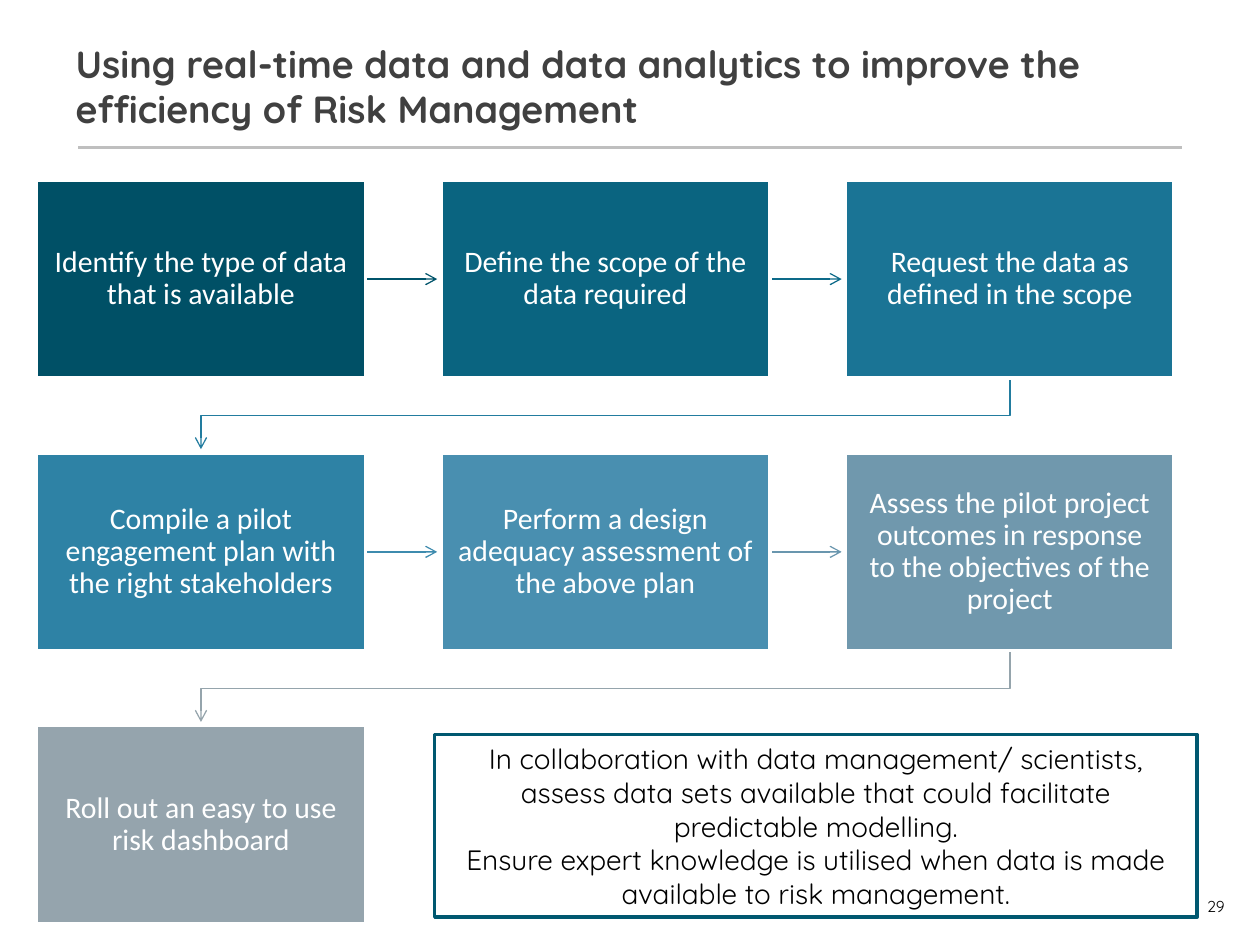
from lxml import etree
from pptx import Presentation
from pptx.dml.color import RGBColor
from pptx.enum.shapes import MSO_CONNECTOR, MSO_SHAPE
from pptx.enum.text import MSO_ANCHOR, MSO_AUTO_SIZE, PP_ALIGN
from pptx.oxml.ns import qn
from pptx.util import Inches, Pt

STRAIGHT = MSO_CONNECTOR.STRAIGHT
RECTANGLE = MSO_SHAPE.RECTANGLE
MIDDLE = MSO_ANCHOR.MIDDLE
NO_AUTOFIT = MSO_AUTO_SIZE.NONE
LEFT, CENTER, RIGHT = PP_ALIGN.LEFT, PP_ALIGN.CENTER, PP_ALIGN.RIGHT

TITLE = "Using real-time data and data analytics to improve the efficiency of Risk Management"
STEPS = [
    ("Identify the type of data that is available", "005066", "00546B"),
    ("Define the scope of the data required", "0A6480", "0D6A89"),
    ("Request the data as defined in the scope", "1A7495", "227C9F"),
    ("Compile a pilot engagement plan with the right stakeholders", "2E82A5", "3E8BAE"),
    ("Perform a design adequacy assessment of the above plan", "498FB0", "6996AE"),
    ("Assess the pilot project outcomes in response to the objectives of the project",
     "7098AD", "95A4AC"),
    ("Roll out an easy to use risk dashboard", "95A4AD", None),
]
COLLABORATION = [
    "In collaboration with data management/ scientists, assess data sets available "
    "that could facilitate predictable modelling.",
    "Ensure expert knowledge is utilised when data is made available to risk management.",
]
COLUMNS = 3
GRID_LEFT, GRID_TOP = 0.29, 1.43
STEP_WIDTH, STEP_HEIGHT = 2.61, 1.57
COLUMN_PITCH, ROW_PITCH = 3.21, 2.165
ARROW_GAP = 0.03


def rgb(value):
    return RGBColor.from_string(value)


def set_line(shape, color, width):
    shape.line.color.rgb = rgb(color)
    shape.line.width = Pt(width)


def add_arrowhead(shape):
    line = shape.element.spPr.find(qn("a:ln"))
    etree.SubElement(line, qn("a:tailEnd"), type="arrow")


def write(shape, texts, font, size, color, align, bold=False, spacing=None):
    frame = shape.text_frame
    frame.word_wrap = True
    frame.vertical_anchor = MIDDLE
    frame.text = "\n".join(texts)
    for paragraph in frame.paragraphs:
        paragraph.alignment = align
        paragraph.line_spacing = spacing
        paragraph.font.name = font
        paragraph.font.size = Pt(size)
        paragraph.font.bold = bold
        paragraph.font.color.rgb = rgb(color)
    return frame


def set_insets(frame, horizontal, vertical):
    frame.margin_left = frame.margin_right = Inches(horizontal)
    frame.margin_top = frame.margin_bottom = Inches(vertical)


def add_title(slide):
    title = slide.shapes.title
    title.left, title.top = Inches(0.5), Inches(0.3)
    title.width, title.height = Inches(9), Inches(0.76)
    frame = write(title, [TITLE], "Quicksand", 21.6, "404040", LEFT, bold=True)
    frame.auto_size = NO_AUTOFIT


def add_straight(slide, x1, y1, x2, y2, color, width):
    line = slide.shapes.add_connector(
        STRAIGHT, Inches(x1), Inches(y1), Inches(x2), Inches(y2))
    set_line(line, color, width)
    etree.SubElement(line.element.spPr, qn("a:effectLst"))
    return line


def add_row_arrow(slide, left, top, color):
    middle = top + STEP_HEIGHT / 2
    arrow = add_straight(slide, left + STEP_WIDTH, middle,
                         left + COLUMN_PITCH - ARROW_GAP, middle, color, 0.75)
    add_arrowhead(arrow)


def add_return_arrow(slide, left, top, color):
    start_x = left + STEP_WIDTH / 2
    end_x = GRID_LEFT + STEP_WIDTH / 2
    bottom = top + STEP_HEIGHT
    turn = (bottom + top + ROW_PITCH) / 2
    outline = slide.shapes.build_freeform(Inches(start_x), Inches(bottom))
    corners = [(start_x, turn), (end_x, turn), (end_x, top + ROW_PITCH - ARROW_GAP)]
    outline.add_line_segments([(Inches(x), Inches(y)) for x, y in corners], close=False)
    arrow = outline.convert_to_shape()
    arrow.shadow.inherit = False
    arrow.fill.background()
    set_line(arrow, color, 0.75)
    add_arrowhead(arrow)


def add_box(slide, left, top, width, height, fill, border):
    box = slide.shapes.add_shape(
        RECTANGLE, Inches(left), Inches(top), Inches(width), Inches(height))
    box.shadow.inherit = False
    box.fill.solid()
    box.fill.fore_color.rgb = rgb(fill)
    set_line(box, border, 2)
    return box


def add_step(slide, index, text, fill, arrow_color):
    row, column = divmod(index, COLUMNS)
    left = GRID_LEFT + column * COLUMN_PITCH
    top = GRID_TOP + row * ROW_PITCH
    if arrow_color:
        add_arrow = add_return_arrow if column == COLUMNS - 1 else add_row_arrow
        add_arrow(slide, left, top, arrow_color)
    step = add_box(slide, left, top, STEP_WIDTH, STEP_HEIGHT, fill, "FFFFFF")
    frame = write(step, [text], "Calibri", 17, "FFFFFF", CENTER, spacing=0.9)
    set_insets(frame, 0.13, 0.13)


def add_page_number(slide):
    number = slide.shapes.add_textbox(
        Inches(9.16), Inches(7.07), Inches(0.56), Inches(0.25))
    frame = write(number, ["29"], "Quicksand", 9, "000000", RIGHT)
    set_insets(frame, 0, 0)


def main():
    deck = Presentation()
    deck.slide_width, deck.slide_height = Inches(10), Inches(7.5)
    slide = deck.slides.add_slide(deck.slide_layouts[5])
    add_straight(slide, 0.62, 1.17, 9.38, 1.17, "BFBFBF", 2)
    add_title(slide)
    for index, step in enumerate(STEPS):
        add_step(slide, index, *step)
    add_page_number(slide)
    collaboration = add_box(slide, 3.45, 5.83, 6.05, 1.45, "FFFFFF", "005870")
    write(collaboration, COLLABORATION, "Quicksand", 16, "000000", CENTER)
    deck.save("out.pptx")


if __name__ == "__main__":
    main()
